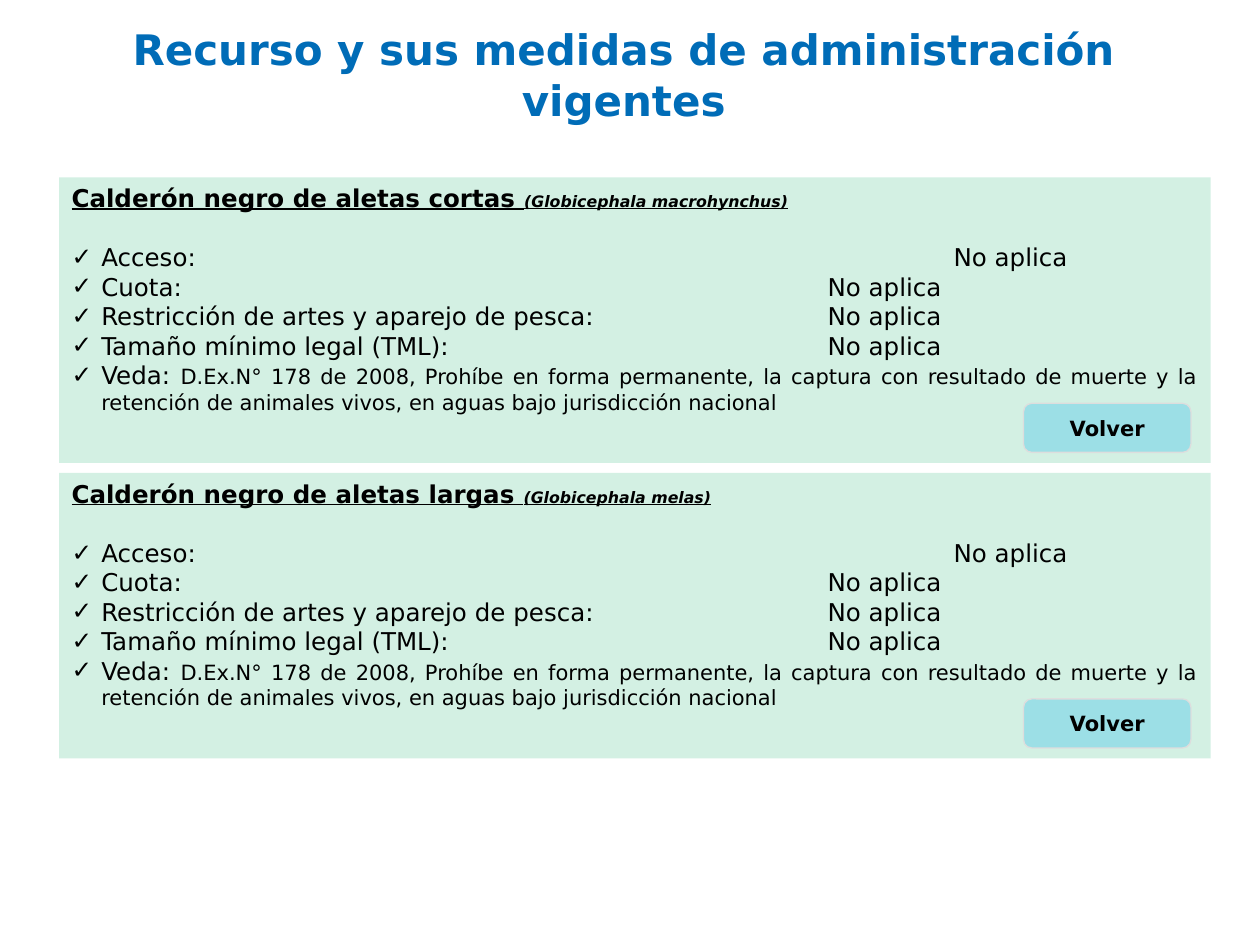
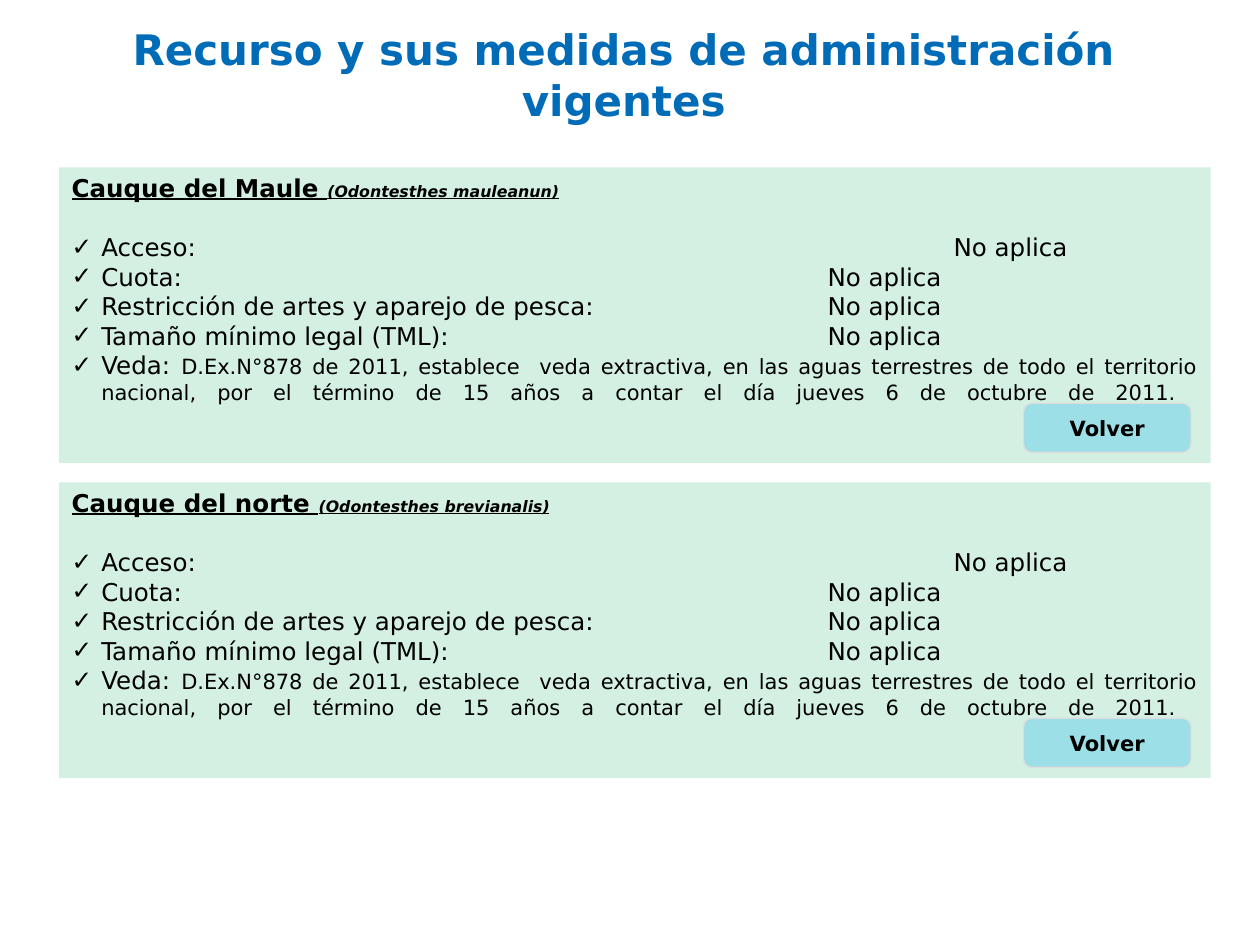
from dataclasses import dataclass

from lxml.etree import SubElement
from pptx import Presentation
from pptx.dml.color import RGBColor
from pptx.enum.shapes import MSO_SHAPE
from pptx.enum.text import MSO_ANCHOR, MSO_AUTO_SIZE, PP_ALIGN
from pptx.oxml.ns import qn
from pptx.util import Pt


@dataclass(frozen=True)
class Theme:
    font: str = "DejaVu Sans"
    title_color: RGBColor = RGBColor(0x00, 0x6C, 0xB7)
    text_color: RGBColor = RGBColor(0, 0, 0)
    panel_color: RGBColor = RGBColor(0xAA, 0xE2, 0xCA)
    panel_opacity: int = 51
    button_color: RGBColor = RGBColor(0x00, 0xB0, 0xF0)
    button_opacity: int = 26
    button_line: RGBColor = RGBColor(0xDD, 0xDD, 0xDD)
    title_size: Pt = Pt(24)
    text_size: Pt = Pt(14)
    detail_size: Pt = Pt(12)
    species_size: Pt = Pt(9)


THEME = Theme()

TITLE = "Recurso y sus medidas de administración vigentes"
# Each measure, its value and the tab stop of the value
MEASURES = [
    ("Acceso: ", "No aplica", 504),
    ("Cuota:", "No aplica", 432),
    ("Restricción de artes y aparejo de pesca:", "No aplica", 432),
    ("Tamaño mínimo legal (TML):", "No aplica", 432),
]
PAGES = [
    {
        "panel_top": 101.3,
        "pitch": 168.9,
        "species": [
            ("Calderón negro de aletas cortas ", "(Globicephala macrohynchus)"),
            ("Calderón negro de aletas largas ", "(Globicephala melas)"),
        ],
        "ban": "D.Ex.N° 178 de 2008, Prohíbe en forma permanente, la captura con "
               "resultado de muerte y la retención de animales vivos, en aguas bajo "
               "jurisdicción nacional",
        "stretch_last_line": False,
    },
    {
        "panel_top": 95.6,
        "pitch": 180,
        "species": [
            ("Cauque del Maule ", "(Odontesthes mauleanun)"),
            ("Cauque del norte ", "(Odontesthes brevianalis)"),
        ],
        "ban": "D.Ex.N°878 de 2011, establece  veda extractiva, en las aguas "
               "terrestres de todo el territorio nacional, por el término de 15 años "
               "a contar el día jueves 6 de octubre de 2011. ",
        "stretch_last_line": True,
    },
]
FIRST_PANEL_BOTTOM = 264.5
BUTTON_RISE = 34  # from the panel's bottom up to the button's top


def add_tinted_shape(page, kind, left, top, width, height, color, opacity):
    shape = page.shapes.add_shape(kind, Pt(left), Pt(top), Pt(width), Pt(height))
    shape.shadow.inherit = False
    shape.fill.solid()
    shape.fill.fore_color.rgb = color
    tint = shape.fill._xPr.find(qn("a:solidFill"))[0]
    SubElement(tint, qn("a:alpha"), val=str(opacity * 1000))
    shape.text_frame.word_wrap = True
    return shape


def add_checked_paragraph(frame, tab_stop=None):
    para = frame.add_paragraph()
    para.alignment = PP_ALIGN.JUSTIFY
    properties = para._p.get_or_add_pPr()
    properties.set("marL", str(Pt(17)))
    properties.set("indent", str(Pt(-17)))
    SubElement(properties, qn("a:buFont"), typeface=THEME.font)
    SubElement(properties, qn("a:buChar"), char="✓")
    if tab_stop:
        tabs = SubElement(properties, qn("a:tabLst"))
        SubElement(tabs, qn("a:tab"), pos=str(Pt(tab_stop)), algn="l")
    para.font.name = THEME.font
    para.font.size = THEME.text_size
    para.font.color.rgb = THEME.text_color
    return para


deck = Presentation()
deck.slide_width, deck.slide_height = Pt(720), Pt(540)

for content in PAGES:
    page = deck.slides.add_slide(deck.slide_layouts[5])

    # Title
    title = page.shapes.title
    title.left, title.top, title.width, title.height = Pt(50.4), Pt(5.8), Pt(612), Pt(73.4)
    title.text_frame.text = TITLE
    title.text_frame.auto_size = MSO_AUTO_SIZE.NONE
    title.text_frame.vertical_anchor = MSO_ANCHOR.MIDDLE
    para = title.text_frame.paragraphs[0]
    para.alignment = PP_ALIGN.CENTER
    para.font.name = THEME.font
    para.font.size = THEME.title_size
    para.font.bold = True
    para.font.color.rgb = THEME.title_color

    for index, (common_name, latin_name) in enumerate(content["species"]):
        offset = index * content["pitch"]

        # Species panel
        panel = add_tinted_shape(
            page, MSO_SHAPE.RECTANGLE, 33.8, content["panel_top"] + offset, 658,
            FIRST_PANEL_BOTTOM - content["panel_top"],
            THEME.panel_color, THEME.panel_opacity)
        panel.line.fill.background()
        frame = panel.text_frame
        frame.vertical_anchor = MSO_ANCHOR.TOP

        # Heading with common and Latin names
        heading = frame.paragraphs[0]
        heading.alignment = PP_ALIGN.JUSTIFY
        heading.space_after = Pt(16.8)
        heading.font.name = THEME.font
        heading.font.bold = True
        heading.font.underline = True
        heading.font.color.rgb = THEME.text_color
        span = heading.add_run()
        span.text = common_name
        span.font.size = THEME.text_size
        span = heading.add_run()
        span.text = latin_name
        span.font.size = THEME.species_size
        span.font.italic = True

        # Measures in force
        for label, value, tab_stop in MEASURES:
            para = add_checked_paragraph(frame, tab_stop)
            para.add_run().text = f"{label}\t{value}"

        # Fishing ban
        para = add_checked_paragraph(frame)
        para.add_run().text = "Veda: "
        span = para.add_run()
        span.text = content["ban"]
        span.font.size = THEME.detail_size
        if content["stretch_last_line"]:
            para.add_line_break()

        # Return button
        button = add_tinted_shape(
            page, MSO_SHAPE.ROUNDED_RECTANGLE, 584.9,
            FIRST_PANEL_BOTTOM - BUTTON_RISE + offset, 95.6, 28,
            THEME.button_color, THEME.button_opacity)
        button.line.color.rgb = THEME.button_line
        button.line.width = Pt(0.75)
        button.text_frame.text = "Volver"
        button.text_frame.vertical_anchor = MSO_ANCHOR.MIDDLE
        para = button.text_frame.paragraphs[0]
        para.alignment = PP_ALIGN.CENTER
        para.font.name = THEME.font
        para.font.size = THEME.detail_size
        para.font.bold = True
        para.font.color.rgb = THEME.text_color

deck.save("out.pptx")
